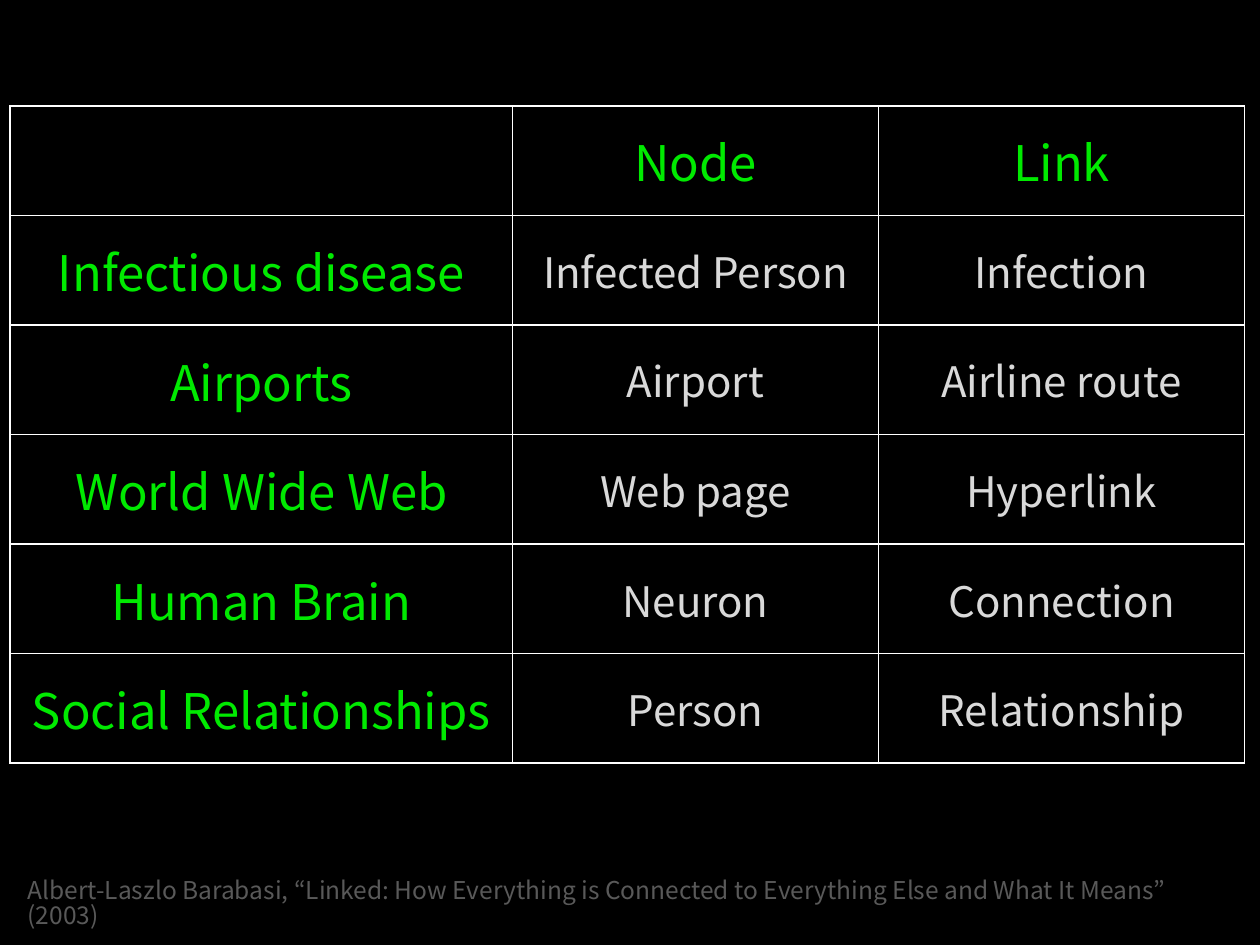
from typing import NamedTuple

from pptx import Presentation
from pptx.dml.color import RGBColor
from pptx.enum.text import MSO_ANCHOR as Anchor, MSO_AUTO_SIZE as Fit, PP_ALIGN as Align
from pptx.oxml import parse_xml
from pptx.oxml.ns import nsdecls
from pptx.util import Pt

BLACK = RGBColor(0x00, 0x00, 0x00)
WHITE = RGBColor(0xFF, 0xFF, 0xFF)
GREEN = RGBColor(0x00, 0xEA, 0x00)
LIGHT = RGBColor(0xD9, 0xD9, 0xD9)
GREY = RGBColor(0x59, 0x59, 0x59)
FACE = "Noto Sans CJK KR"


class Style(NamedTuple):
    size: float
    color: RGBColor


class Network(NamedTuple):
    name: str
    node: str
    link: str


HEAD = Style(28, GREEN)
BODY = Style(24, LIGHT)
CITE = Style(14, GREY)

ROWS = [
    Network("", "Node", "Link"),
    Network("Infectious disease", "Infected Person", "Infection"),
    Network("Airports", "Airport", "Airline route"),
    Network("World Wide Web", "Web page", "Hyperlink"),
    Network("Human Brain", "Neuron", "Connection"),
    Network("Social Relationships", "Person", "Relationship"),
]
WIDTHS = [287, 209.2, 209.2]
HEIGHT = 62.6
SOURCE = ("Albert-Laszlo Barabasi, “Linked: How Everything is Connected to "
          "Everything Else and What It Means” (2003)")


def write(frame, text: str, style: Style, align: Align) -> None:
    para = frame.paragraphs[0]
    para.alignment = align
    run = para.add_run()
    run.text = text
    font = run.font
    font.name, font.size, font.bold = FACE, Pt(style.size), False
    font.color.rgb = style.color
    props = font._element
    for tag in ("ea", "cs"):
        props.append(parse_xml(f'<a:{tag} {nsdecls("a")} typeface="{FACE}"/>'))


def border(cell) -> None:
    """Rule all four sides; the lines must come before the cell's fill."""
    props = cell._tc.get_or_add_tcPr()
    for spot, side in enumerate("LRTB"):
        props.insert(spot, parse_xml(
            f'<a:ln{side} {nsdecls("a")} w="{Pt(1)}"><a:solidFill>'
            f'<a:srgbClr val="{WHITE}"/></a:solidFill></a:ln{side}>'))


def add_grid(slide) -> None:
    shape = slide.shapes.add_table(
        len(ROWS), len(WIDTHS), Pt(5.8), Pt(60.5),
        Pt(sum(WIDTHS)), Pt(HEIGHT * len(ROWS)))
    table = shape.table
    table.first_row = table.horz_banding = False
    for col, width in zip(table.columns, WIDTHS):
        col.width = Pt(width)
    for i, row in enumerate(ROWS):
        table.rows[i].height = Pt(HEIGHT)
        for j, text in enumerate(row):
            cell = table.cell(i, j)
            cell.fill.solid()
            cell.fill.fore_color.rgb = BLACK
            cell.vertical_anchor = Anchor.MIDDLE
            border(cell)
            if text:
                write(cell.text_frame, text, BODY if i and j else HEAD, Align.CENTER)


def set_title(slide) -> None:
    title = slide.shapes.title
    place = {"left": 8.6, "top": 491, "width": 702.7, "height": 39.6}
    for name, value in place.items():
        setattr(title, name, Pt(value))
    frame = title.text_frame
    form = {"word_wrap": True, "auto_size": Fit.NONE,
            "vertical_anchor": Anchor.TOP, "margin_left": Pt(7.2),
            "margin_right": Pt(7.2), "margin_top": Pt(11.3), "margin_bottom": 0}
    for name, value in form.items():
        setattr(frame, name, value)
    write(frame, SOURCE, CITE, Align.LEFT)
    frame.paragraphs[0].line_spacing = 0.85


def main() -> None:
    deck = Presentation()
    deck.slide_width, deck.slide_height = Pt(720), Pt(540)
    slide = deck.slides.add_slide(deck.slide_layouts.get_by_name("Title Only"))
    back = slide.background.fill
    back.solid()
    back.fore_color.rgb = BLACK
    add_grid(slide)
    set_title(slide)
    deck.save("out.pptx")


if __name__ == "__main__":
    main()
